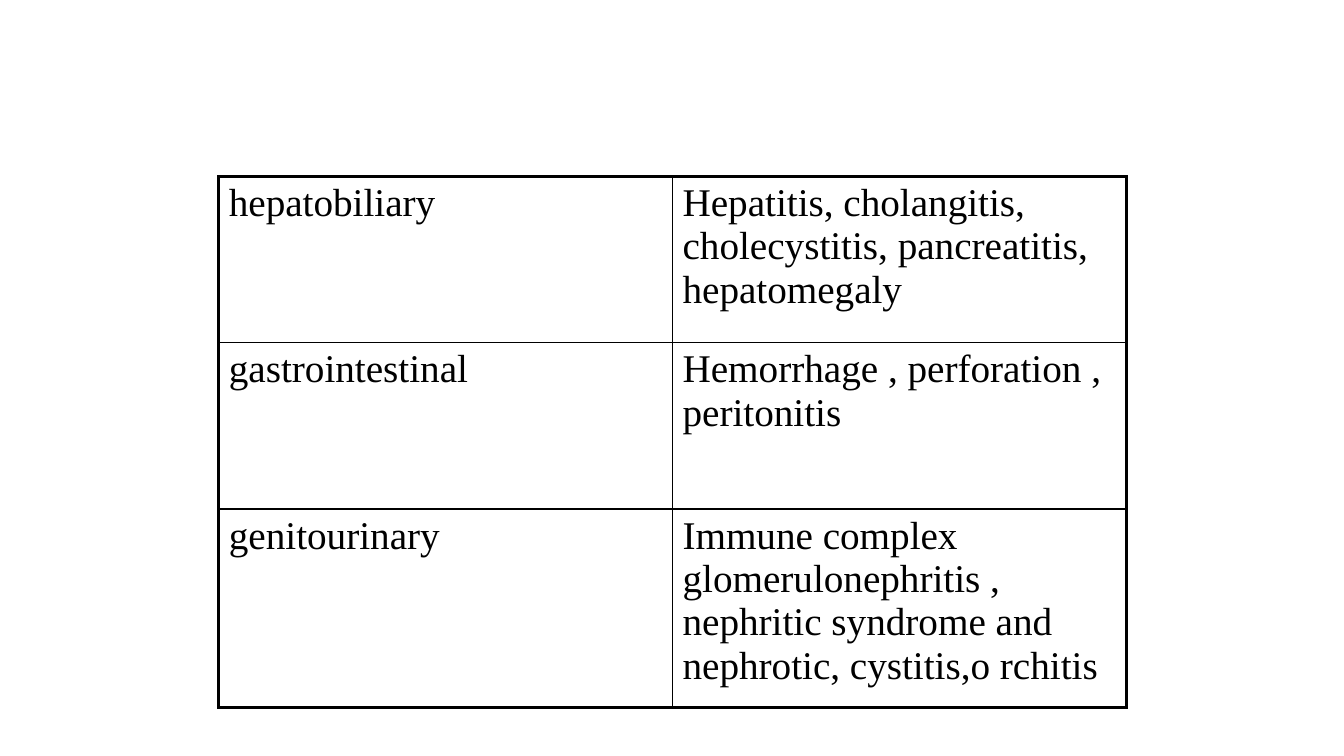
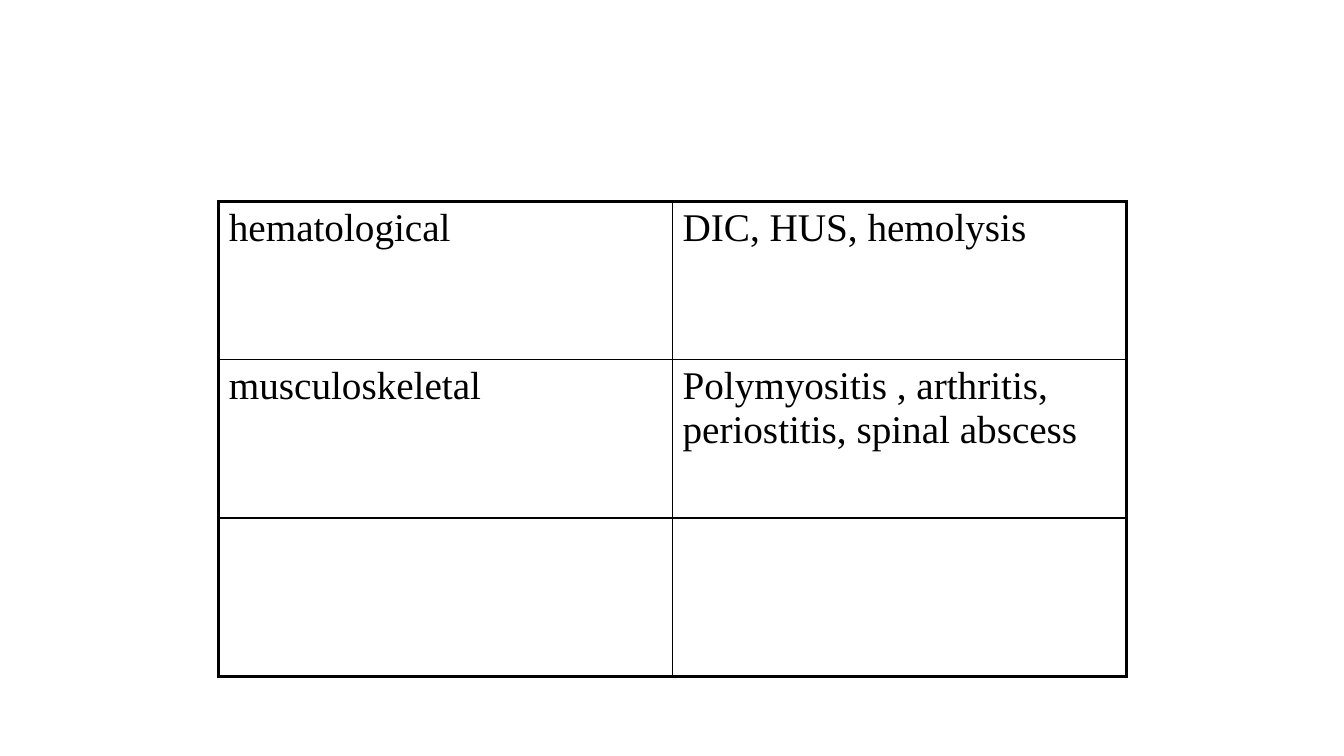
from lxml import etree
from pptx import Presentation
from pptx import util as u
from pptx.dml.color import RGBColor
from pptx.oxml.ns import qn

FONT, SIZE, INK, PAPER = "Times New Roman", 28, "000000", "FFFFFF"
THICK, THIN = 2.25, 1
LEFT, COL = 2.17, 4.5

SLIDES = [
    {"top": 1.75, "rows": [
        (1.65, "hepatobiliary",
         "Hepatitis, cholangitis, cholecystitis, pancreatitis, hepatomegaly"),
        (1.65, "gastrointestinal", "Hemorrhage , perforation , peritonitis"),
        (1.97, "genitourinary",
         "Immune complex glomerulonephritis , nephritic syndrome and nephrotic, cystitis,o rchitis"),
    ]},
    {"top": 2, "rows": [
        (1.57, "hematological", "DIC, HUS, hemolysis"),
        (1.57, "musculoskeletal", "Polymyositis , arthritis, periostitis, spinal abscess"),
        (1.57, "", ""),
    ]},
]


def color(code):
    return RGBColor.from_string(code)


def border(cell, side, width):
    line = etree.SubElement(cell._tc.get_or_add_tcPr(), qn("a:ln" + side), w=str(u.Pt(width)))
    fill = etree.SubElement(line, qn("a:solidFill"))
    etree.SubElement(fill, qn("a:srgbClr"), val=INK)


def style(cell, edges):
    for side, outer in edges.items():
        border(cell, side, THICK if outer else THIN)
    cell.fill.background()
    for para in cell.text_frame.paragraphs:
        para.font.size = u.Pt(SIZE)
        for run in para.runs:
            run.font.name = FONT
            run.font.size = u.Pt(SIZE)
            run.font.color.rgb = color(INK)


def build(deck, top, rows):
    slide = deck.slides.add_slide(deck.slide_layouts[6])
    high = sum(row[0] for row in rows)
    table = slide.shapes.add_table(
        len(rows), 2, u.Inches(LEFT), u.Inches(top), u.Inches(2 * COL), u.Inches(high)).table
    table.first_row = table.horz_banding = False
    for col in table.columns:
        col.width = u.Inches(COL)
    for r, (height, *words) in enumerate(rows):
        table.rows[r].height = u.Inches(height)
        for c, word in enumerate(words):
            cell = table.cell(r, c)
            cell.text_frame.text = word
            style(cell, {"L": c == 0, "R": c == 1, "T": r == 0, "B": r == len(rows) - 1})


def main():
    deck = Presentation()
    deck.slide_width, deck.slide_height = u.Inches(13.33), u.Inches(7.5)
    back = deck.slide_master.background.fill
    back.solid()
    back.fore_color.rgb = color(PAPER)
    for item in SLIDES:
        build(deck, item["top"], item["rows"])
    deck.save("out.pptx")


if __name__ == "__main__":
    main()
